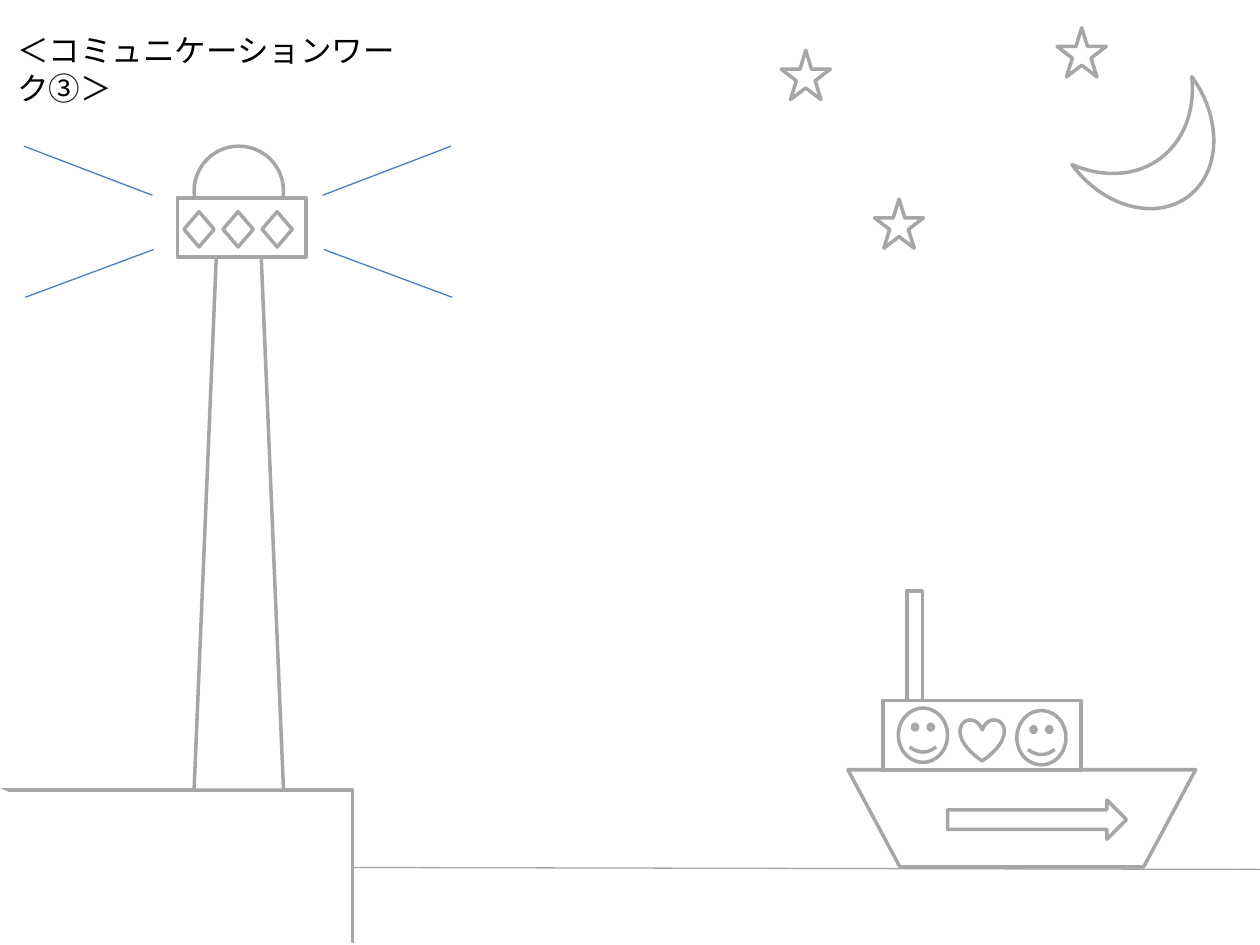
from lxml.etree import SubElement
from pptx import Presentation
from pptx.dml.color import RGBColor
from pptx.enum.shapes import MSO_CONNECTOR, MSO_SHAPE
from pptx.enum.text import MSO_AUTO_SIZE
from pptx.oxml.ns import qn
from pptx.util import Inches, Pt

GRAY = RGBColor(0xA6, 0xA6, 0xA6)
BLUE = RGBColor(0x4B, 0x7E, 0xBC)
WHITE = RGBColor(0xFF, 0xFF, 0xFF)
BLACK = RGBColor(0, 0, 0)
FONT = "Noto Sans CJK JP"


def add_title(slide, text):
    box = slide.shapes.add_textbox(Inches(0.04), Inches(0.2), Inches(3.4), Inches(0.4))
    frame = box.text_frame
    frame.word_wrap = True
    frame.auto_size = MSO_AUTO_SIZE.SHAPE_TO_FIT_TEXT
    para = frame.paragraphs[0]
    para.text = text
    para.font.size = Pt(18)
    para.font.name = FONT
    para.font.color.rgb = BLACK
    for props in box.element.iter(qn("a:defRPr")):
        SubElement(props, qn("a:ea")).set("typeface", FONT)


def add_part(slide, kind, left, top, width, height, color=GRAY):
    """Add a white shape with a 2 pt outline."""
    part = slide.shapes.add_shape(
        kind, Inches(left), Inches(top), Inches(width), Inches(height))
    part.shadow.inherit = False
    part.fill.solid()
    part.fill.fore_color.rgb = WHITE
    part.line.color.rgb = color
    part.line.width = Pt(2)
    return part


def flip(part, axis):
    part.element.spPr.get_or_add_xfrm().set("flip" + axis, "1")


def add_line(slide, x1, y1, x2, y2, color):
    line = slide.shapes.add_connector(
        MSO_CONNECTOR.STRAIGHT, Inches(x1), Inches(y1), Inches(x2), Inches(y2))
    line.line.color.rgb = color
    line.line.width = Pt(0.75)
    SubElement(line.element.spPr, qn("a:effectLst"))
    return line


def draw_shore(slide):
    area = (0, 6.27, 2.8, 1.23)
    quay = add_part(slide, MSO_SHAPE.RECTANGLE, *area)
    # The white triangle hides the left and bottom edges of the quay.
    add_part(slide, MSO_SHAPE.RIGHT_TRIANGLE, *area, color=WHITE)
    sea = add_line(slide, 2.8, 6.88, 10, 6.9, GRAY)
    sea.begin_connect(quay, 3)


def draw_ship(slide):
    hull = add_part(slide, MSO_SHAPE.TRAPEZOID, 6.73, 6.11, 2.76, 0.77)
    hull.adjustments[0] = 0.535
    flip(hull, "V")
    add_part(slide, MSO_SHAPE.RECTANGLE, 7.01, 5.56, 1.57, 0.55)
    add_part(slide, MSO_SHAPE.RECTANGLE, 7.2, 4.69, 0.12, 0.87)
    for left, top in ((7.13, 5.62), (8.07, 5.64)):
        add_part(slide, MSO_SHAPE.SMILEY_FACE, left, top, 0.39, 0.43)
    add_part(slide, MSO_SHAPE.HEART, 7.62, 5.71, 0.35, 0.33)
    add_part(slide, MSO_SHAPE.RIGHT_ARROW, 7.52, 6.35, 1.42, 0.31)


def draw_tower(slide):
    add_part(slide, MSO_SHAPE.TRAPEZOID, 1.54, 2.02, 0.71, 4.25)
    add_part(slide, MSO_SHAPE.OVAL, 1.54, 1.16, 0.71, 0.71)
    add_part(slide, MSO_SHAPE.RECTANGLE, 1.41, 1.57, 1.02, 0.47)
    for col in range(3):
        add_part(slide, MSO_SHAPE.DIAMOND, 1.46 + 0.31 * col, 1.68, 0.24, 0.28)
    for near, far in ((2.56, 3.58), (1.21, 0.19)):
        add_line(slide, near, 1.55, far, 1.16, BLUE)
        add_line(slide, near + 0.01, 1.98, far + 0.01, 2.36, BLUE)


def draw_sky(slide):
    moon = add_part(slide, MSO_SHAPE.MOON, 8.83, 0.67, 0.75, 1.18)
    moon.rotation = 53.8
    flip(moon, "H")
    for left, top in ((6.2, 0.4), (6.94, 1.58), (8.39, 0.22)):
        add_part(slide, MSO_SHAPE.STAR_5_POINT, left, top, 0.39, 0.39)


def main():
    deck = Presentation()
    deck.slide_width = Inches(10)
    deck.slide_height = Inches(7.5)
    slide = deck.slides.add_slide(deck.slide_layouts[6])
    add_title(slide, "＜コミュニケーションワーク③＞")
    draw_shore(slide)
    draw_ship(slide)
    draw_tower(slide)
    draw_sky(slide)
    deck.save("out.pptx")


if __name__ == "__main__":
    main()
